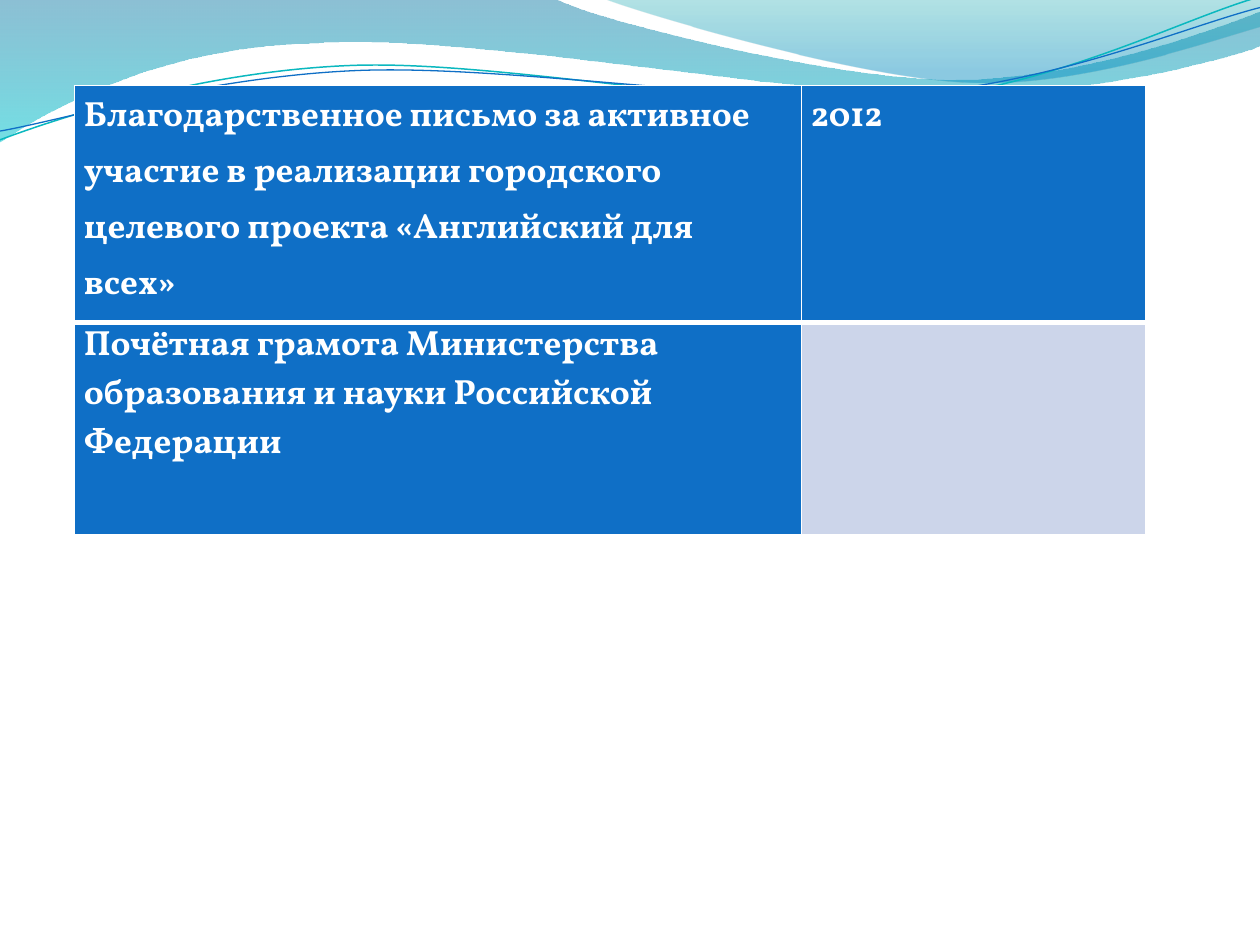
from dataclasses import dataclass
from math import cos, radians, sin

from lxml.etree import SubElement
from pptx import Presentation
from pptx.dml.color import RGBColor
from pptx.oxml import parse_xml
from pptx.oxml.ns import nsdecls, qn
from pptx.util import Inches, Pt

COLUMNS, ROWS = 1000, 750
UNIT = Inches(10) // COLUMNS
STRAND_TURN = -2.7


@dataclass(frozen=True)
class Theme:
    font: str = "Vollkorn"
    text_size: int = 20
    white: str = "FFFFFF"
    blue: str = "0F6FC6"
    pale: str = "CCD5EA"
    teal: str = "0AB8BF"
    wide_wave: tuple = ((0, "0074A1", 45), (1, "00C6CF", 55))
    right_wave: tuple = ((0, "00A1A9", 30), (0.8, "008BBF", 45))
    thin: float = 1
    thick: float = 3


@dataclass(frozen=True)
class Box:
    left: float
    top: float
    width: float
    height: float

    def emu(self):
        return [int(value * UNIT) for value in (self.left, self.top, self.width, self.height)]

    def center(self):
        return self.left + self.width / 2, self.top + self.height / 2


THEME = Theme()

WAVES = (
    (THEME.wide_wave, (0, 0), (
        (440, -1),
        (476, 17, 664, 63, 758, 63), (853, 63, 958, 26, 1000, 9),
        (1001, 36),
        (983, 44, 870, 76, 746, 75), (622, 75, 382, 28, 257, 34),
        (129, 36, 46, 83, -1, 113))),
    (THEME.right_wave, (479, -1), (
        (509, 11, 682, 62, 769, 65), (856, 69, 961, 32, 1000, 21),
        (1000, 0))),
)
STRANDS = (
    (THEME.teal, 0.85, Box(-2, 22, 1002, 71), (0, 111), (
        (48, 93, 158, 57, 277, 52), (395, 47, 593, 89, 713, 80),
        (833, 71, 938, 15, 998, -2))),
    (THEME.blue, 0.75, Box(-2, 30, 1003, 58), (0, 104), (
        (47, 96, 164, 61, 283, 56), (403, 51, 597, 84, 717, 75),
        (836, 67, 941, 21, 1000, 6))),
)
AWARDS = (
    ("Благодарственное письмо за активное участие в реализации городского "
     "целевого проекта «Английский для всех»", "2012"),
    ("Почётная грамота Министерства образования и науки Российской Федерации", ""),
)


def apply(target, **values):
    for name, value in values.items():
        setattr(target, name, value)


def turn(point, center, degrees):
    angle = radians(degrees)
    x, y = point[0] - center[0], point[1] - center[1]
    return (center[0] + x * cos(angle) - y * sin(angle),
            center[1] + x * sin(angle) + y * cos(angle))


def bend(shape, segments):
    steps = iter(list(shape._element.iter(qn("a:lnTo"))))
    for segment in segments:
        group = [next(steps) for _ in range(len(segment) // 2)]
        if len(group) == 3:
            curve = parse_xml(f'<a:cubicBezTo {nsdecls("a")}/>')
            group[0].addprevious(curve)
            for step in group:
                curve.append(step[0])
                step.getparent().remove(step)


def draw_outline(page, box, start, segments, closed, rotation=0):
    points = [start]
    for segment in segments:
        points.extend(zip(segment[::2], segment[1::2]))
    flat = [turn(point, box.center(), -rotation) for point in points]
    scaled = [(x * UNIT, y * UNIT) for x, y in flat]
    builder = page.shapes.build_freeform(*scaled[0], scale=1.0)
    builder.add_line_segments(scaled[1:], close=closed)
    shape = builder.convert_to_shape()
    bend(shape, segments)
    shape.rotation = rotation
    shape.shadow.inherit = False
    return shape


def fill_gradient(shape, stops):
    shape.fill.gradient()
    shape.fill.gradient_angle = 270
    for stop, (position, color, _) in zip(shape.fill.gradient_stops, stops):
        stop.position = position
        stop.color.rgb = RGBColor.from_string(color)
    for color, (_, _, opacity) in zip(shape._element.iter(qn("a:srgbClr")), stops):
        SubElement(color, qn("a:alpha")).set("val", str(opacity * 1000))


def add_waves(page, box):
    for stops, start, segments in WAVES:
        wave = draw_outline(page, box, start, segments, True)
        fill_gradient(wave, stops)
        wave.line.fill.background()
    for color, width, frame, start, segments in STRANDS:
        strand = draw_outline(page, frame, start, segments, False, STRAND_TURN)
        strand.fill.background()
        strand.line.color.rgb = RGBColor.from_string(color)
        strand.line.width = Pt(width)


def set_borders(cell, widths):
    properties = cell._tc.get_or_add_tcPr()
    for index, (side, width) in enumerate(widths.items()):
        properties.insert(index, parse_xml(
            f'<a:ln{side} {nsdecls("a")} w="{Pt(width)}"><a:solidFill>'
            f'<a:srgbClr val="{THEME.white}"/></a:solidFill></a:ln{side}>'))


def fill_cell(cell, text, color, line_spacing):
    side = int(7.5 * UNIT)
    apply(cell, margin_left=side, margin_right=side, margin_top=0, margin_bottom=0)
    cell.fill.solid()
    cell.fill.fore_color.rgb = RGBColor.from_string(color)
    if text:
        para = cell.text_frame.paragraphs[0]
        para.line_spacing = line_spacing
        span = para.add_run()
        span.text = text
        apply(span.font, name=THEME.font, size=Pt(THEME.text_size), bold=True)
        span.font.color.rgb = RGBColor.from_string(THEME.white)


def add_awards(page, box):
    table = page.shapes.add_table(len(AWARDS), 2, *box.emu()).table
    for column, width in zip(table.columns, (577, box.width - 577)):
        column.width = int(width * UNIT)
    for row, height in zip(table.rows, (188, box.height - 188)):
        row.height = int(height * UNIT)
    for row, texts in enumerate(AWARDS):
        head = row == 0
        top, bottom = (THEME.thin, THEME.thick) if head else (THEME.thick, THEME.thin)
        for column, text in enumerate(texts):
            cell = table.cell(row, column)
            color = THEME.blue if text else THEME.pale
            fill_cell(cell, text, color, 1.15 if head else 1.0)
            set_borders(cell, {"L": THEME.thin, "R": THEME.thin, "T": top, "B": bottom})


def main():
    deck = Presentation()
    apply(deck, slide_width=COLUMNS * UNIT, slide_height=ROWS * UNIT)
    page = deck.slides.add_slide(deck.slide_layouts[6])
    add_waves(page, Box(0, 0, COLUMNS, 113))
    add_awards(page, Box(59, 68, 850, 356.5))
    deck.save("out.pptx")


if __name__ == "__main__":
    main()
